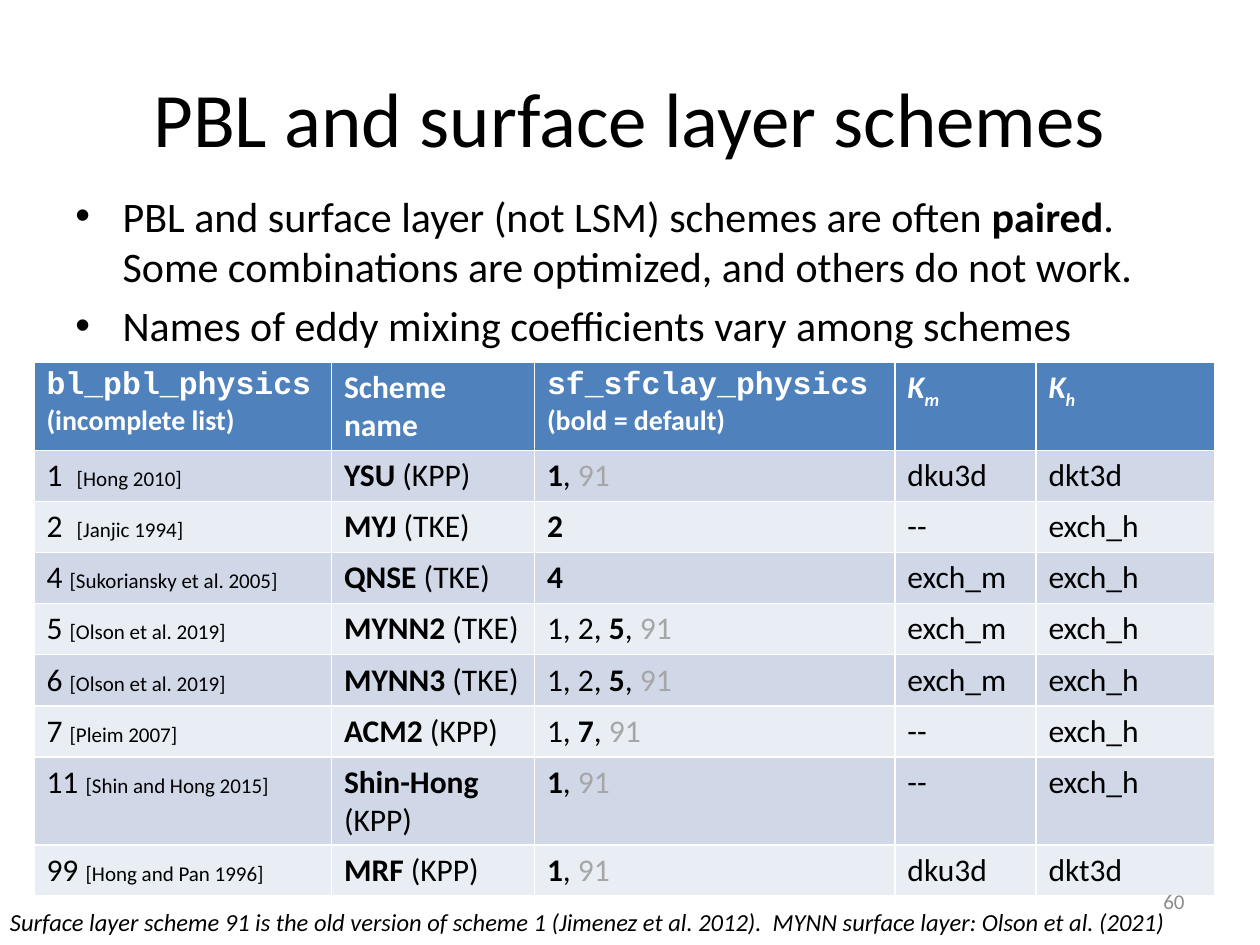
from lxml import etree
from pptx import Presentation
from pptx.dml.color import RGBColor
from pptx.enum.text import MSO_ANCHOR, MSO_AUTO_SIZE, PP_ALIGN
from pptx.oxml.ns import qn
from pptx.util import Pt

CENTER = PP_ALIGN.CENTER
RIGHT = PP_ALIGN.RIGHT
MIDDLE = MSO_ANCHOR.MIDDLE
FIT_SHAPE = MSO_AUTO_SIZE.SHAPE_TO_FIT_TEXT
TITLE_ONLY = 5

SANS = "Calibri"
MONO = "Courier New"
COLORS = {
    "text": "000000",
    "header_text": "FFFFFF",
    "muted": "A6A6A6",
    "page_number": "8C8C8C",
    "header": "4F81BD",
    "odd_row": "D0D8E8",
    "even_row": "E9EDF4",
}

BOLD = {"bold": True}
CITATION = {"size": 12}
MUTED = {"color": "muted"}
HEADER_NAME = {"name": MONO}
HEADER_NOTE = {"size": 16}
SUBSCRIPT = {"baseline": -25}

BULLETS = [
    [("PBL and surface layer (not LSM) schemes are often ", {}),
     ("paired", BOLD),
     (".  Some combinations are optimized, and others do not work.", {})],
    [("Names of eddy mixing coefficients vary among schemes", {})],
]
HEADERS = [
    [[("bl_pbl_physics ", HEADER_NAME), ("(incomplete list)", HEADER_NOTE)]],
    [[("Scheme name", {})]],
    [[("sf_sfclay_physics", HEADER_NAME)], [("(bold = default)", HEADER_NOTE)]],
    [[("K", {}), ("m", SUBSCRIPT)]],
    [[("K", {}), ("h", SUBSCRIPT)]],
]
ITALIC_HEADERS = (3, 4)
SCHEMES = [
    ("1  ", "Hong 2010", "YSU", "KPP", "1 91", "1", "dku3d", "dkt3d"),
    ("2  ", "Janjic 1994", "MYJ", "TKE", "2", "2", "--", "exch_h"),
    ("4 ", "Sukoriansky et al. 2005", "QNSE", "TKE", "4", "4", "exch_m", "exch_h"),
    ("5 ", "Olson et al. 2019", "MYNN2", "TKE", "1 2 5 91", "5", "exch_m", "exch_h"),
    ("6 ", "Olson et al. 2019", "MYNN3", "TKE", "1 2 5 91", "5", "exch_m", "exch_h"),
    ("7 ", "Pleim 2007", "ACM2", "KPP", "1 7 91", "7", "--", "exch_h"),
    ("11 ", "Shin and Hong 2015", "Shin-Hong", "KPP", "1 91", "1", "--", "exch_h"),
    ("99 ", "Hong and Pan 1996", "MRF", "KPP", "1 91", "1", "dku3d", "dkt3d"),
]
COLUMN_WIDTHS = [170, 116, 206, 80.6, 102.2]
HEADER_HEIGHT = 50
ROW_HEIGHT = 29.2
SURFACE_NOTE = ("Surface layer scheme 91 is the old version of scheme 1 "
                "(Jimenez et al. 2012).  MYNN surface layer: Olson et al. (2021)")


def rgb(key):
    return RGBColor.from_string(COLORS[key])


def style_font(font, name=None, size=None, color=None, bold=None, italic=None):
    if name:
        font.name = name
    if size:
        font.size = Pt(size)
    if color:
        font.color.rgb = rgb(color)
    if bold is not None:
        font.bold = bold
    if italic is not None:
        font.italic = italic


def write_runs(paragraph, runs, **base):
    style_font(paragraph.font, **base)
    for text, style in runs:
        run = paragraph.add_run()
        run.text = text
        overrides = dict(style)
        baseline = overrides.pop("baseline", None)
        style_font(run.font, **overrides)
        if baseline:
            run._r.get_or_add_rPr().set("baseline", str(baseline * 1000))


def write_paragraphs(frame, paragraphs, **base):
    for index, runs in enumerate(paragraphs):
        paragraph = frame.add_paragraph() if index else frame.paragraphs[0]
        write_runs(paragraph, runs, **base)


def add_text(slide, left, top, width, height, paragraphs, wrap=True, **base):
    box = slide.shapes.add_textbox(Pt(left), Pt(top), Pt(width), Pt(height))
    box.text_frame.word_wrap = wrap
    write_paragraphs(box.text_frame, paragraphs, name=SANS, **base)
    return box.text_frame


def set_title(slide, text):
    title = slide.shapes.title
    title.left, title.top, title.width, title.height = Pt(36), Pt(21.6), Pt(648), Pt(90)
    title.text_frame.vertical_anchor = MIDDLE
    paragraph = title.text_frame.paragraphs[0]
    paragraph.alignment = CENTER
    write_runs(paragraph, [(text, {})], name=SANS, size=44, color="text")


def add_bullets(slide, items):
    frame = add_text(slide, 36, 105.1, 648, 356.4, items, size=24, color="text")
    for paragraph in frame.paragraphs:
        paragraph.space_before = Pt(4.8)
        properties = paragraph._p.get_or_add_pPr()
        properties.set("marL", str(Pt(27)))
        properties.set("indent", str(Pt(-27)))
        bullet_font = etree.Element(qn("a:buFont"), typeface="Arial")
        bullet = etree.Element(qn("a:buChar"), char="•")
        spacing = properties.find(qn("a:spcBef"))
        spacing.addnext(bullet_font)
        bullet_font.addnext(bullet)


def surface_runs(options, default):
    runs = []
    for option in options.split():
        if runs:
            runs.append((", ", {}))
        style = BOLD if option == default else MUTED if option == "91" else {}
        runs.append((option, style))
    return runs


def scheme_cells(number, citation, scheme, closure, options, default, km, kh):
    return [
        [(number, {}), (f"[{citation}]", CITATION)],
        [(scheme, BOLD), (f" ({closure})", {})],
        surface_runs(options, default),
        [(km, {})],
        [(kh, {})],
    ]


def fill_cell(cell, paragraphs, fill, **base):
    cell.fill.solid()
    cell.fill.fore_color.rgb = rgb(fill)
    write_paragraphs(cell.text_frame, paragraphs, name=SANS, size=18, **base)


def add_scheme_table(slide):
    row_count = len(SCHEMES) + 1
    height = HEADER_HEIGHT + ROW_HEIGHT * len(SCHEMES)
    table = slide.shapes.add_table(
        row_count, len(COLUMN_WIDTHS), Pt(19.4), Pt(206.9),
        Pt(sum(COLUMN_WIDTHS)), Pt(height)).table
    for column, width in zip(table.columns, COLUMN_WIDTHS):
        column.width = Pt(width)
    for index, row in enumerate(table.rows):
        row.height = Pt(ROW_HEIGHT if index else HEADER_HEIGHT)
    for index, paragraphs in enumerate(HEADERS):
        fill_cell(table.cell(0, index), paragraphs, "header", color="header_text",
                  bold=True, italic=index in ITALIC_HEADERS)
    for row, scheme in enumerate(SCHEMES, start=1):
        fill = "odd_row" if row % 2 else "even_row"
        for column, runs in enumerate(scheme_cells(*scheme)):
            fill_cell(table.cell(row, column), [runs], fill, color="text")


def add_page_number(slide, number):
    frame = add_text(slide, 516.2, 500.4, 167.8, 28.8, [[(number, {})]],
                     size=12, color="page_number")
    frame.vertical_anchor = MIDDLE
    frame.paragraphs[0].alignment = RIGHT


def add_surface_note(slide):
    frame = add_text(slide, -1.4, 514.8, 675.4, 24.5, [[(SURFACE_NOTE, {})]],
                     wrap=False, size=14, color="text", italic=True)
    frame.auto_size = FIT_SHAPE


def main():
    deck = Presentation()
    deck.slide_width, deck.slide_height = Pt(720), Pt(540)
    slide = deck.slides.add_slide(deck.slide_layouts[TITLE_ONLY])
    set_title(slide, "PBL and surface layer schemes")
    add_bullets(slide, BULLETS)
    add_scheme_table(slide)
    add_page_number(slide, "60")
    add_surface_note(slide)
    deck.save("out.pptx")


if __name__ == "__main__":
    main()
